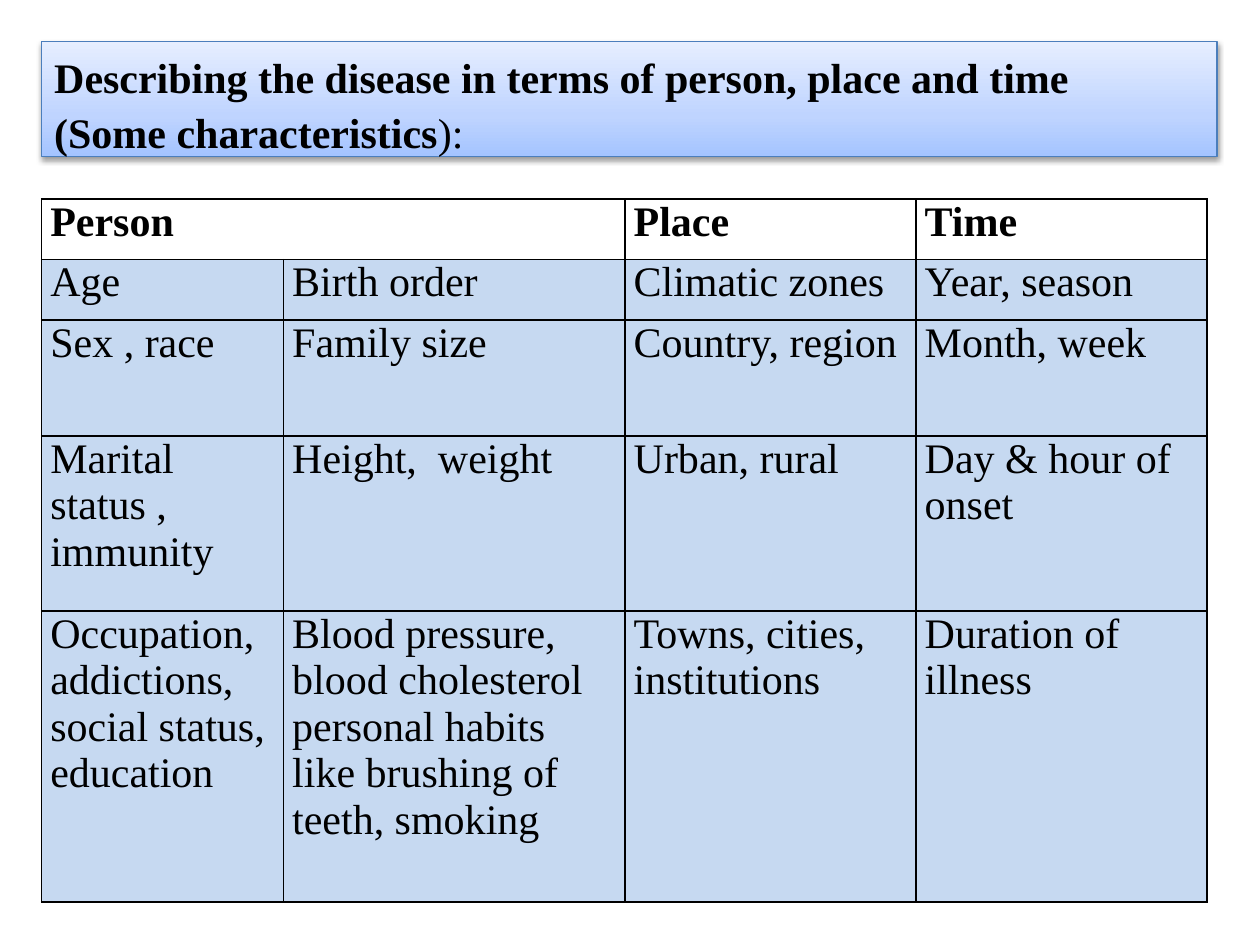
from copy import deepcopy

from lxml.etree import SubElement
from pptx import Presentation
from pptx.dml.color import RGBColor
from pptx.enum.text import MSO_ANCHOR, MSO_AUTO_SIZE, PP_ALIGN
from pptx.oxml.ns import qn
from pptx.util import Inches, Pt

COLORS = {
    "text": "000000",
    "border": "000000",
    "header": "FFFFFF",
    "body": "C6D9F1",
    "title_line": "4B7EBC",
    "title_low": "A4C4FF",
    "title_middle": "BFD4FF",
    "title_high": "E6EEFF",
}
TITLE = [
    [("Describing the disease in terms of person, place and time", True)],
    [("(Some characteristics", True), ("):", False)],
]
COLUMN_WIDTHS = [1.92, 2.71, 2.31, 2.31]
ROW_HEIGHTS = [0.48, 0.48, 0.92, 1.39, 2.31]
ROWS = [
    ["Person", "", "Place", "Time"],
    ["Age", "Birth order", "Climatic zones", "Year, season"],
    ["Sex , race", "Family size", "Country, region", "Month, week"],
    ["Marital status , immunity", "Height,  weight", "Urban, rural", "Day & hour of onset"],
    [
        "Occupation, addictions, social status, education",
        "Blood pressure, blood cholesterol personal habits like brushing of teeth, smoking",
        "Towns, cities, institutions",
        "Duration of illness",
    ],
]


def color(name):
    return RGBColor.from_string(COLORS[name])


def set_values(target, values):
    for name, value in values.items():
        setattr(target, name, value)


def add_span(para, text, bold):
    span = para.add_run()
    span.text = text
    set_values(span.font, {"name": "Times New Roman", "size": Pt(24), "bold": bold})
    span.font.color.rgb = color("text")


def add_shadow(shape):
    effects = SubElement(shape._element.spPr, qn("a:effectLst"))
    shadow = SubElement(effects, qn("a:outerShdw"), blurRad=str(Pt(3.1)), dist=str(Pt(1.6)),
                        dir="5400000", rotWithShape="0")
    tone = SubElement(shadow, qn("a:srgbClr"), val="000000")
    SubElement(tone, qn("a:alpha"), val="38000")


def fill_gradient(shape):
    fill = shape.fill
    fill.gradient()
    fill.gradient_angle = 90
    stop_list = shape._element.spPr.find(".//" + qn("a:gsLst"))
    stop_list.append(deepcopy(stop_list[-1]))
    stops = [(0, "title_low"), (0.35, "title_middle"), (1, "title_high")]
    for stop, (position, name) in zip(fill.gradient_stops, stops):
        stop.position = position
        stop.color.rgb = color(name)


def place_title(page, left, top, width, height):
    box = page.shapes.title
    set_values(box, {"left": left, "top": top, "width": width, "height": height})
    fill_gradient(box)
    box.line.color.rgb = color("title_line")
    box.line.width = Pt(0.75)
    add_shadow(box)
    frame = box.text_frame
    set_values(frame, {
        "word_wrap": True,
        "auto_size": MSO_AUTO_SIZE.SHAPE_TO_FIT_TEXT,
        "vertical_anchor": MSO_ANCHOR.TOP,
    })
    for index, spans in enumerate(TITLE):
        para = frame.add_paragraph() if index else frame.paragraphs[0]
        set_values(para, {"alignment": PP_ALIGN.LEFT, "line_spacing": 1.08, "space_before": Pt(0)})
        for text, bold in spans:
            add_span(para, text, bold)


def add_borders(cell):
    properties = cell._tc.get_or_add_tcPr()
    for side in ("lnL", "lnR", "lnT", "lnB"):
        line = SubElement(properties, qn("a:" + side), w=str(Pt(1)))
        fill = SubElement(line, qn("a:solidFill"))
        SubElement(fill, qn("a:srgbClr"), val=COLORS["border"])


def format_cell(cell, text, is_header):
    add_borders(cell)
    cell.fill.solid()
    cell.fill.fore_color.rgb = color("header" if is_header else "body")
    set_values(cell, {
        "margin_left": Inches(0.07),
        "margin_right": Inches(0.07),
        "margin_top": 0,
        "margin_bottom": 0,
        "vertical_anchor": MSO_ANCHOR.TOP,
    })
    if text:
        para = cell.text_frame.paragraphs[0]
        para.alignment = PP_ALIGN.LEFT
        add_span(para, text, is_header)


def place_table(page, left, top, width, height):
    table = page.shapes.add_table(len(ROWS), len(COLUMN_WIDTHS), left, top, width, height).table
    set_values(table, {"first_row": False, "horz_banding": False})
    for column, size in zip(table.columns, COLUMN_WIDTHS):
        column.width = Inches(size)
    for row, size in zip(table.rows, ROW_HEIGHTS):
        row.height = Inches(size)
    for row_index, texts in enumerate(ROWS):
        for column_index, text in enumerate(texts):
            format_cell(table.cell(row_index, column_index), text, row_index == 0)
    table.cell(0, 0).merge(table.cell(0, 1))


def main():
    deck = Presentation()
    deck.slide_width = Inches(10)
    deck.slide_height = Inches(7.5)
    page = deck.slides.add_slide(deck.slide_layouts[5])
    place_title(page, Inches(0.33), Inches(0.33), Inches(9.33), Inches(0.91))
    place_table(page, Inches(0.33), Inches(1.58), Inches(sum(COLUMN_WIDTHS)), Inches(sum(ROW_HEIGHTS)))
    deck.save("out.pptx")


if __name__ == "__main__":
    main()
